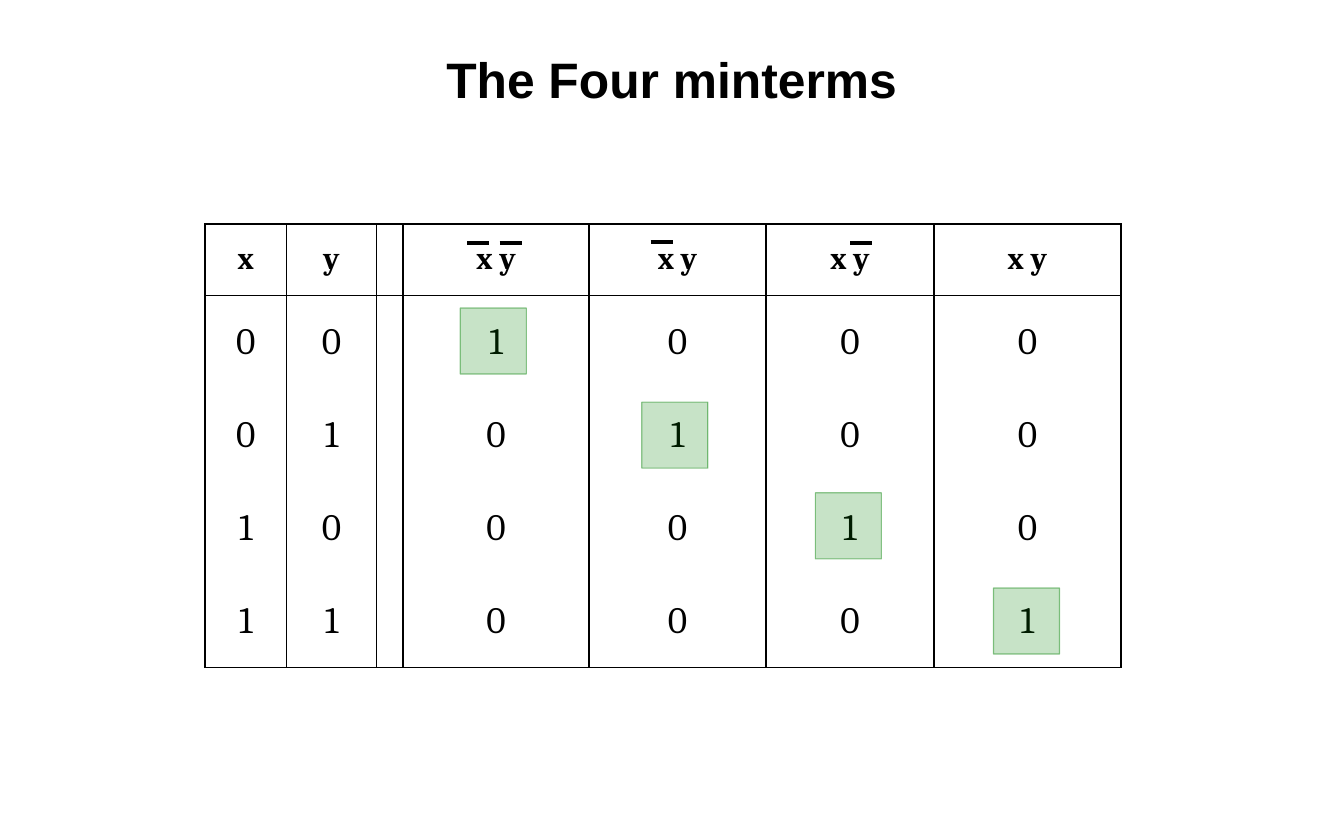
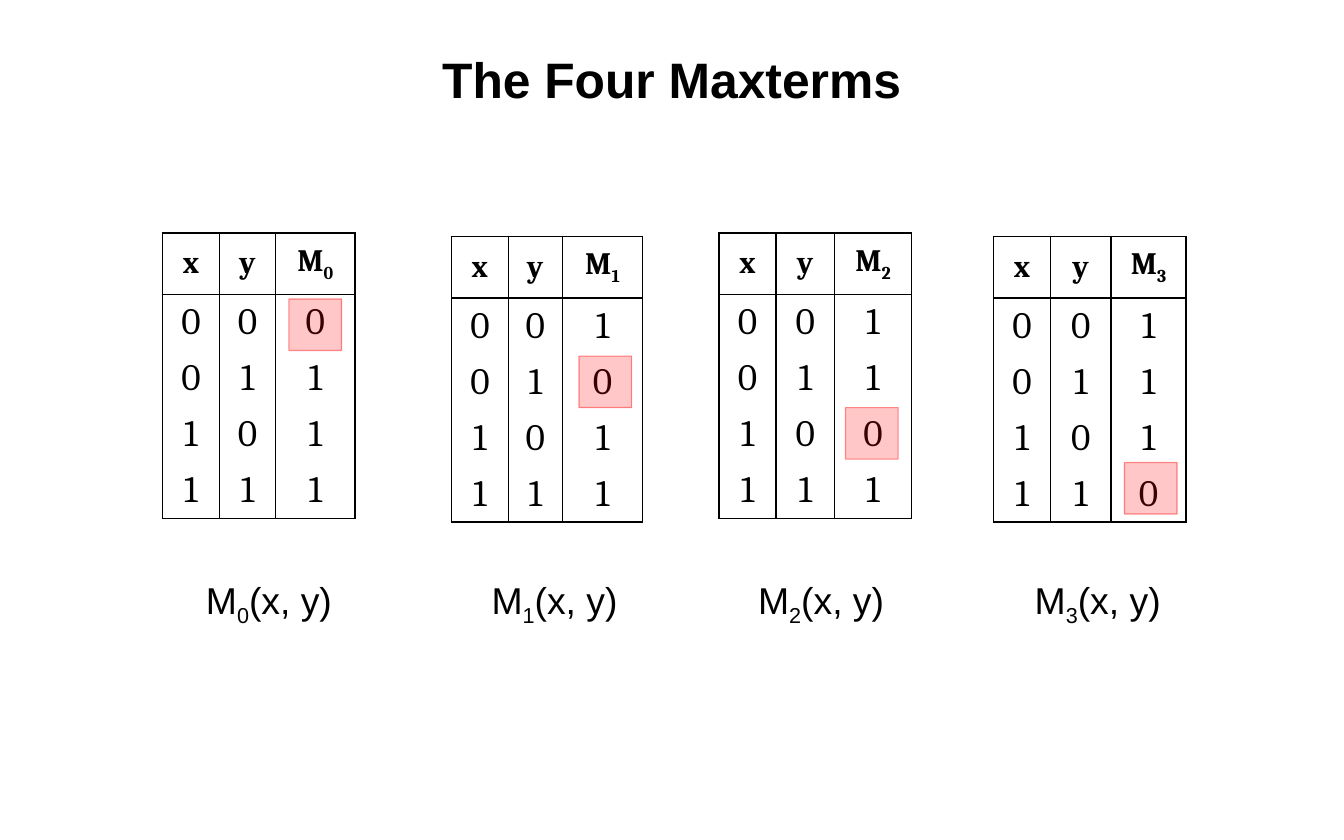
from itertools import product

from pptx import Presentation
from pptx.dml.color import RGBColor
from pptx.enum.shapes import MSO_CONNECTOR, MSO_SHAPE
from pptx.enum.text import MSO_ANCHOR, MSO_AUTO_SIZE, PP_ALIGN
from pptx.oxml.ns import qn
from pptx.oxml.xmlchemy import OxmlElement
from pptx.util import Inches, Pt

COLORS = {"ink": "000000", "minterm": "008000", "maxterm": "FF0000"}
TITLE_FONT, TABLE_FONT = "Arial", "Cambria"
INPUTS = list(product("01", repeat=2))


def add_runs(paragraph, text, font, size, bold=False):
    """Add text in black; a digit after an underscore becomes a subscript."""
    base, _, rest = text.partition("_")
    for part, lowered in ((base, False), (rest[:1], True), (rest[1:], False)):
        if not part:
            continue
        run = paragraph.add_run()
        run.text = part
        run.font.name = font
        run.font.size = Pt(size)
        run.font.bold = bold
        run.font.color.rgb = RGBColor.from_string(COLORS["ink"])
        if lowered:
            run._r.get_or_add_rPr().set("baseline", "-25000")


def set_border(cell, side, visible):
    """Draw or clear one side (L, R, T or B) of a table cell."""
    border = OxmlElement(f"a:ln{side}")
    if visible:
        border.set("w", str(Pt(1)))
        fill = OxmlElement("a:solidFill")
        color = OxmlElement("a:srgbClr")
        color.set("val", COLORS["ink"])
        fill.append(color)
    else:
        border.set("w", "0")
        fill = OxmlElement("a:noFill")
    border.append(fill)
    cell._tc.get_or_add_tcPr().append(border)


prs = Presentation()
prs.slide_width, prs.slide_height = Inches(12), Inches(7.5)

slides = []
for heading in ("The Four minterms", "The Four Maxterms"):
    slide = prs.slides.add_slide(prs.slide_layouts[5])
    title = slide.shapes.title
    title.left, title.top = Inches(0), Inches(0.33)
    title.width, title.height = Inches(12), Inches(0.75)
    title.text_frame.vertical_anchor = MSO_ANCHOR.MIDDLE
    title_line = title.text_frame.paragraphs[0]
    title_line.alignment = PP_ALIGN.CENTER
    add_runs(title_line, heading, TITLE_FONT, 32, bold=True)
    slides.append(slide)
minterm_slide, maxterm_slide = slides

# Truth tables: slide, left, top, column widths, header height, row height, rows
minterm_rows = [["x", "y", "", "x y", "x y", "x y", "x y"]]
for index, (x, y) in enumerate(INPUTS):
    minterm_rows.append([x, y, ""] + [str(int(index == term)) for term in range(4)])
truth_tables = [(minterm_slide, 1.83, 2, (0.73, 0.8, 0.23, 1.66, 1.58, 1.5, 1.67),
                 0.64, 0.83, minterm_rows)]

maxterm_layout = [
    (1.45, 2.08, (0.51, 0.5, 0.71)),
    (4.03, 2.11, (0.51, 0.48, 0.72)),
    (6.42, 2.08, (0.51, 0.52, 0.69)),
    (8.87, 2.11, (0.51, 0.54, 0.67)),
]
for term, (left, top, widths) in enumerate(maxterm_layout):
    maxterm_rows = [["x", "y", f"M_{term}"]]
    for index, (x, y) in enumerate(INPUTS):
        maxterm_rows.append([x, y, str(int(index != term))])
    truth_tables.append((maxterm_slide, left, top, widths, 0.55, 0.5, maxterm_rows))

for slide, left, top, widths, header_height, row_height, rows in truth_tables:
    heights = [header_height] + [row_height] * len(INPUTS)
    table = slide.shapes.add_table(
        len(rows), len(widths), Inches(left), Inches(top),
        Inches(sum(widths)), Inches(sum(heights))).table
    table.first_row = table.horz_banding = False
    for column, width in zip(table.columns, widths):
        column.width = Inches(width)
    for r, (values, height) in enumerate(zip(rows, heights)):
        table.rows[r].height = Inches(height)
        is_header = r == 0
        for c, value in enumerate(values):
            cell = table.cell(r, c)
            cell.vertical_anchor = MSO_ANCHOR.MIDDLE
            entry = cell.text_frame.paragraphs[0]
            entry.alignment = PP_ALIGN.CENTER
            entry.space_before = Pt(6 if is_header else 12)
            add_runs(entry, value, TABLE_FONT, 20 if is_header else 24, is_header)
            set_border(cell, "L", True)
            set_border(cell, "R", True)
            set_border(cell, "T", r <= 1)
            set_border(cell, "B", is_header or r == len(INPUTS))
            cell.fill.background()

# Captions under the maxterm tables
for term, left in enumerate((1.74, 4.29, 6.67, 9.14)):
    caption = maxterm_slide.shapes.add_textbox(
        Inches(left), Inches(5.1), Inches(1.35), Inches(0.51)).text_frame
    caption.word_wrap = False
    caption.auto_size = MSO_AUTO_SIZE.SHAPE_TO_FIT_TEXT
    add_runs(caption.paragraphs[0], f"M_{term}(x, y)", TITLE_FONT, 24)

# Translucent squares over the value that defines each term
highlights = [
    (minterm_slide, "minterm", 0.59, 0.59,
     [(4.11, 2.75), (5.73, 3.59), (7.28, 4.4), (8.87, 5.25)]),
    (maxterm_slide, "maxterm", 0.47, 0.46,
     [(2.58, 2.67), (5.17, 3.18), (7.55, 3.64), (10.04, 4.13)]),
]
for slide, kind, width, height, corners in highlights:
    for left, top in corners:
        marker = slide.shapes.add_shape(
            MSO_SHAPE.RECTANGLE, Inches(left), Inches(top), Inches(width), Inches(height))
        marker.shadow.inherit = False
        marker.fill.solid()
        marker.line.width = Pt(0.75)
        for paint, opacity in ((marker.fill.fore_color, 22), (marker.line.color, 43)):
            paint.rgb = RGBColor.from_string(COLORS[kind])
            alpha = OxmlElement("a:alpha")
            alpha.set("val", str(opacity * 1000))
            paint._color._xClr.append(alpha)

# Negation bars over the minterm headers
for left, top in ((4.17, 2.17), (4.46, 2.17), (5.81, 2.16), (7.59, 2.17)):
    negation = minterm_slide.shapes.add_connector(
        MSO_CONNECTOR.STRAIGHT, Inches(left), Inches(top), Inches(left + 0.2), Inches(top))
    negation.line.width = Pt(3)
    negation.line.color.rgb = RGBColor.from_string(COLORS["ink"])
    negation._element.find(qn("p:spPr")).append(OxmlElement("a:effectLst"))

prs.save("out.pptx")
